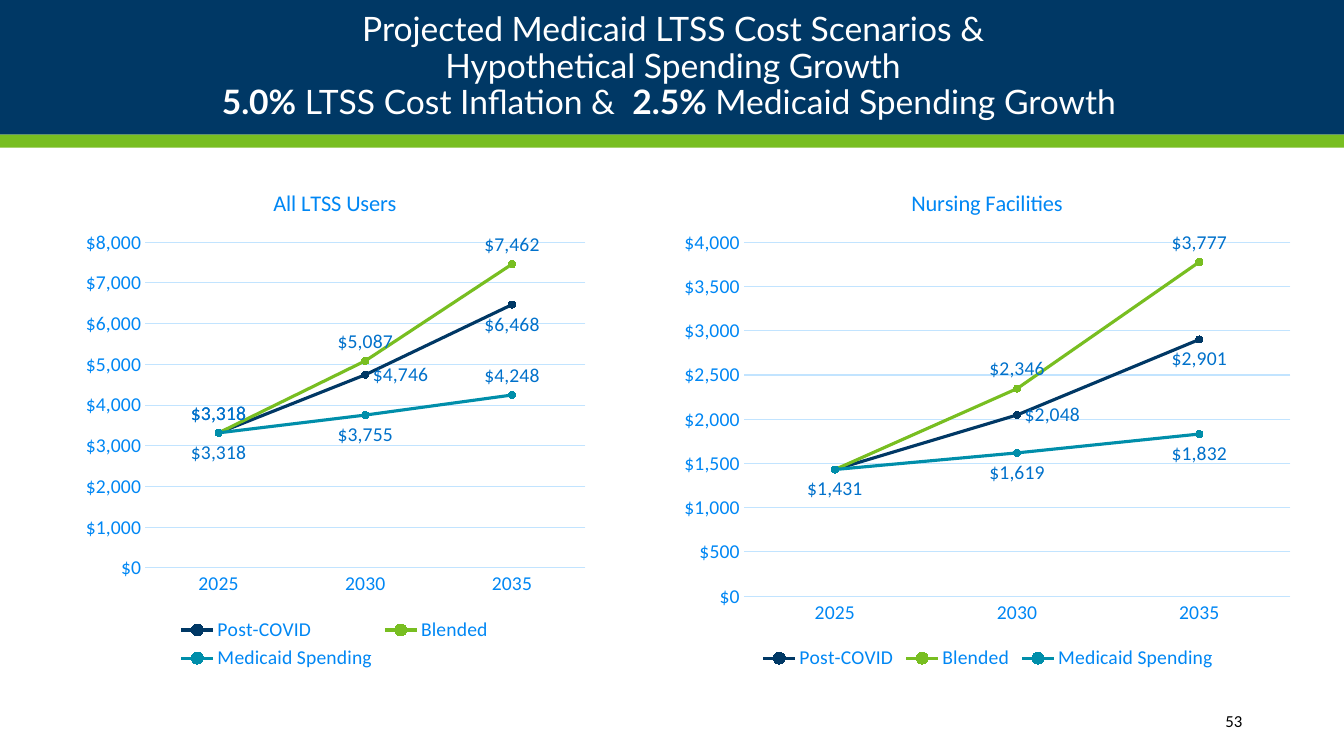
import dataclasses
import typing

import pptx
import pptx.chart.data
import pptx.dml.color
import pptx.enum.chart
import pptx.enum.shapes
import pptx.enum.text
import pptx.oxml
import pptx.oxml.ns
import pptx.util
from lxml import etree

COLORS = {
    "navy": "003865", "green": "78BE21", "teal": "008EAA", "axis": "0087F4",
    "label": "0071CB", "grid": "C2E4FF", "white": "FFFFFF", "black": "000000",
}
WIDTH, HEIGHT = pptx.util.Inches(13.33), pptx.util.Inches(7.5)
MONEY = '"$"#,##0'
YEARS = ("2025", "2030", "2035")
POSITIONS = {
    "t": pptx.enum.chart.XL_LABEL_POSITION.ABOVE,
    "b": pptx.enum.chart.XL_LABEL_POSITION.BELOW,
    "r": pptx.enum.chart.XL_LABEL_POSITION.RIGHT,
}


class Box(typing.NamedTuple):
    """Left, top, width and height in percent of the slide."""
    x: float
    y: float
    w: float
    h: float

    def emu(self) -> tuple[int, int, int, int]:
        return (round(self.x * WIDTH / 100), round(self.y * HEIGHT / 100),
                round(self.w * WIDTH / 100), round(self.h * HEIGHT / 100))


class Band(typing.NamedTuple):
    box: Box
    color: str


class Scenario(typing.NamedTuple):
    name: str
    color: str
    values: tuple[int, ...]
    labels: str


@dataclasses.dataclass(frozen=True)
class CostChart:
    title: str
    box: Box
    title_at: dict[str, float]
    plot_at: dict[str, float]
    top: int
    step: int
    scenarios: tuple[Scenario, ...]


BANDS = (
    Band(Box(0, 0, 100, 17.8), "navy"),
    Band(Box(0, 17.8, 100, 1.75), "green"),
)
TITLE_LINES = (
    (("Projected Medicaid LTSS Cost Scenarios &", False),),
    (("Hypothetical Spending Growth", False),),
    (("5.0%", True), (" LTSS Cost Inflation &  ", False),
     ("2.5%", True), (" Medicaid Spending Growth ", False)),
)
CHARTS = (
    CostChart(
        "All LTSS Users", Box(5.55, 21.33, 38.71, 67.87),
        {"x": 37.4, "y": 4.3}, {"x": 13.6, "y": 15.8, "w": 84.6, "h": 63.5},
        8000, 1000,
        (Scenario("Post-COVID", "navy", (3318, 4746, 6468), "brb"),
         Scenario("Blended", "green", (3318, 5087, 7462), "ttt"),
         Scenario("Medicaid Spending", "teal", (3318, 3755, 4248), "tbt"))),
    CostChart(
        "Nursing Facilities", Box(50.04, 21.33, 46.96, 67.87),
        {"x": 37.2, "y": 4.3}, {"x": 11.3, "y": 15.8, "w": 86.6, "h": 69},
        4000, 500,
        (Scenario("Post-COVID", "navy", (1431, 2048, 2901), "-rb"),
         Scenario("Blended", "green", (1431, 2346, 3777), "-tt"),
         Scenario("Medicaid Spending", "teal", (1431, 1619, 1832), "bbb"))),
)


def rgb(name: str) -> pptx.dml.color.RGBColor:
    return pptx.dml.color.RGBColor.from_string(COLORS[name])


def set_font(font, size: float, color: str, name: str = "Calibri", bold: bool = False) -> None:
    font.size = pptx.util.Pt(size)
    font.name = name
    font.bold = bold
    font.color.rgb = rgb(color)


def set_line(line, color: str, width: float) -> None:
    line.color.rgb = rgb(color)
    line.width = pptx.util.Pt(width)


def place_part(parent, at: dict[str, float], index: int, inner: bool = False) -> None:
    qn = pptx.oxml.ns.qn
    layout = parent.find(qn("c:layout"))
    if layout is None:
        layout = pptx.oxml.parse_xml(f'<c:layout {pptx.oxml.ns.nsdecls("c")}/>')
        parent.insert(index, layout)
    manual = etree.SubElement(layout, qn("c:manualLayout"))
    if inner:
        etree.SubElement(manual, qn("c:layoutTarget")).set("val", "inner")
    for mode in ("xMode", "yMode"):
        etree.SubElement(manual, qn(f"c:{mode}")).set("val", "edge")
    for side, share in at.items():
        etree.SubElement(manual, qn(f"c:{side}")).set("val", f"{share / 100:.3f}")


def draw_band(s, band: Band, depth: int) -> None:
    sp = s.shapes.add_shape(pptx.enum.shapes.MSO_SHAPE.RECTANGLE, *band.box.emu())
    sp.shadow.inherit = False
    sp.fill.solid()
    sp.fill.fore_color.rgb = rgb(band.color)
    sp.line.fill.background()
    s.shapes._spTree.insert(2 + depth, sp._element)


def draw_title(s) -> None:
    sp = s.shapes.title
    sp.left, sp.top, sp.width, sp.height = Box(3.23, 0, 93.7, 17.8).emu()
    tf = sp.text_frame
    tf.auto_size = pptx.enum.text.MSO_AUTO_SIZE.NONE
    tf.vertical_anchor = pptx.enum.text.MSO_ANCHOR.MIDDLE
    tf.margin_left = tf.margin_right = 0
    p = tf.paragraphs[0]
    p.alignment = pptx.enum.text.PP_ALIGN.CENTER
    p.line_spacing = 0.9
    set_font(p.font, 24, "white", "Lato")
    for i, line in enumerate(TITLE_LINES):
        if i:
            p.add_line_break()
        for text, bold in line:
            r = p.add_run()
            r.text = text
            set_font(r.font, 24, "white", "Lato", bold)


def draw_page_number(s, number: str) -> None:
    sp = s.shapes.add_textbox(*Box(81.17, 92.67, 12, 5.33).emu())
    tf = sp.text_frame
    tf.word_wrap = True
    tf.vertical_anchor = pptx.enum.text.MSO_ANCHOR.MIDDLE
    p = tf.paragraphs[0]
    p.alignment = pptx.enum.text.PP_ALIGN.RIGHT
    r = p.add_run()
    r.text = number
    set_font(r.font, 12, "black")


def style_series(ser, scenario: Scenario) -> None:
    ser.smooth = False
    set_line(ser.format.line, scenario.color, 2.25)
    ser.marker.style = pptx.enum.chart.XL_MARKER_STYLE.CIRCLE
    ser.marker.size = 5
    ser.marker.format.fill.solid()
    ser.marker.format.fill.fore_color.rgb = rgb(scenario.color)
    set_line(ser.marker.format.line, scenario.color, 0.75)
    ser.data_labels.show_value = False
    for i, side in enumerate(scenario.labels):
        if side in POSITIONS:
            label = ser.points[i].data_label
            set_font(label.font, 14, "label")
            label.position = POSITIONS[side]


def draw_chart(s, spec: CostChart) -> None:
    data = pptx.chart.data.CategoryChartData(number_format=MONEY)
    data.categories = YEARS
    for scenario in spec.scenarios:
        data.add_series(scenario.name, scenario.values)
    chart = s.shapes.add_chart(
        pptx.enum.chart.XL_CHART_TYPE.LINE_MARKERS, *spec.box.emu(), data).chart
    set_font(chart.font, 14, "navy")
    chart.has_title = True
    r = chart.chart_title.text_frame.paragraphs[0].add_run()
    r.text = spec.title
    set_font(r.font, 16, "axis")
    place_part(chart.chart_title._element, spec.title_at, 1)
    place_part(chart._chartSpace.chart.plotArea, spec.plot_at, 0, inner=True)
    chart.has_legend = True
    chart.legend.position = pptx.enum.chart.XL_LEGEND_POSITION.BOTTOM
    chart.legend.include_in_layout = False
    set_font(chart.legend.font, 14, "axis")
    years, dollars = chart.category_axis, chart.value_axis
    for axis in (years, dollars):
        axis.major_tick_mark = axis.minor_tick_mark = pptx.enum.chart.XL_TICK_MARK.NONE
        set_font(axis.tick_labels.font, 14, "axis")
    set_line(years.format.line, "grid", 0.75)
    dollars.format.line.fill.background()
    dollars.minimum_scale, dollars.maximum_scale = 0, spec.top
    dollars.major_unit = spec.step
    dollars.tick_labels.number_format = MONEY
    dollars.tick_labels.number_format_is_linked = False
    set_line(dollars.major_gridlines.format.line, "grid", 0.75)
    chart.plots[0].vary_by_categories = False
    for ser, scenario in zip(chart.plots[0].series, spec.scenarios):
        style_series(ser, scenario)


def main() -> None:
    prs = pptx.Presentation()
    prs.slide_width, prs.slide_height = WIDTH, HEIGHT
    s = prs.slides.add_slide(prs.slide_layouts[5])
    for depth, band in enumerate(BANDS):
        draw_band(s, band, depth)
    draw_title(s)
    draw_page_number(s, "53")
    for spec in CHARTS:
        draw_chart(s, spec)
    prs.save("out.pptx")


if __name__ == "__main__":
    main()
